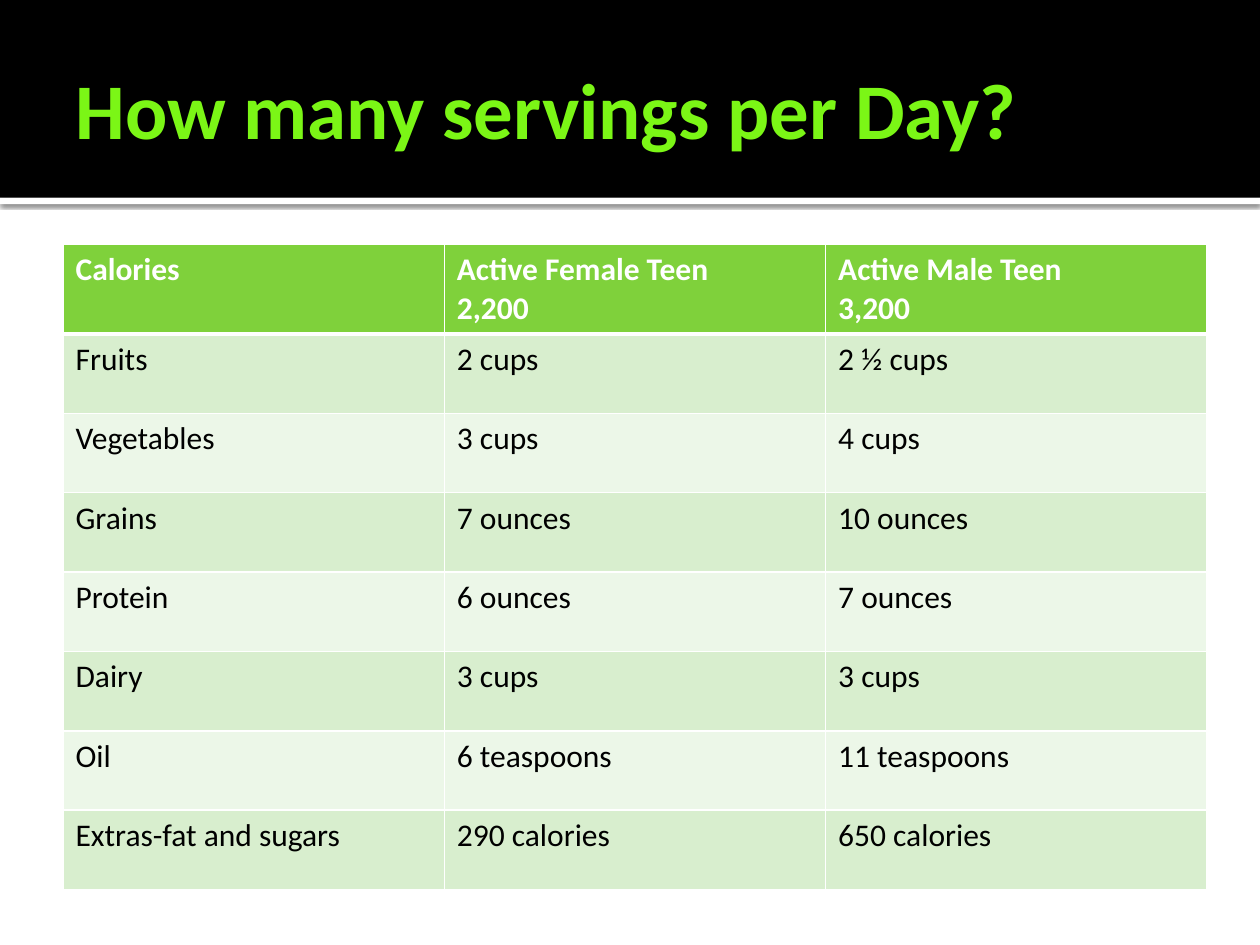
from dataclasses import dataclass

from lxml import etree
from pptx import Presentation
from pptx import util as u
from pptx.dml.color import RGBColor
from pptx.enum import shapes, text
from pptx.oxml import ns, parse_xml

In = u.Inches


@dataclass(frozen=True)
class Theme:
    """Hold the colours, font and type sizes."""
    font: str = "Calibri"
    black: str = "000000"
    white: str = "FFFFFF"
    lime: str = "7BF616"
    head: str = "7FD13B"
    bands: tuple = ("D8EECE", "ECF7E8")
    title: int = 45
    body: int = 18


T = Theme()
ROWS = [
    ("Calories", "Active Female Teen\n2,200", "Active Male Teen\n3,200"),
    ("Fruits", "2 cups", "2 ½ cups"),
    ("Vegetables", "3 cups", "4 cups"),
    ("Grains", "7 ounces", "10 ounces"),
    ("Protein", "6 ounces", "7 ounces"),
    ("Dairy", "3 cups", "3 cups"),
    ("Oil", "6 teaspoons", "11 teaspoons"),
    ("Extras-fat and sugars", "290 calories", "650 calories"),
]


def write(frame, words, size=T.body, color=T.black, bold=False):
    """Fill a text frame with formatted, left-aligned paragraphs."""
    frame.text = words
    for par in frame.paragraphs:
        par.alignment = text.PP_ALIGN.LEFT
        for run in par.runs:
            font = run.font
            font.name, font.size, font.bold = T.font, u.Pt(size), bold
            font.color.rgb = RGBColor.from_string(color)


def paint(fill, color):
    """Give a fill one solid colour."""
    fill.solid()
    fill.fore_color.rgb = RGBColor.from_string(color)


def bar(slide, box, color):
    """Add a plain rectangle without line or shadow."""
    rect = slide.shapes.add_shape(shapes.MSO_SHAPE.RECTANGLE, *map(In, box))
    rect.shadow.inherit = False
    paint(rect.fill, color)
    rect.line.fill.background()
    return rect


def shade(rect, blur, dist, alpha):
    """Cast a soft shadow straight down, with sizes in points."""
    effects = rect.element.spPr.find(ns.qn("a:effectLst"))
    glow = etree.SubElement(
        effects, ns.qn("a:outerShdw"), blurRad=str(u.Pt(blur)),
        dist=str(u.Pt(dist)), dir="5400000", rotWithShape="0")
    tint = etree.SubElement(glow, ns.qn("a:srgbClr"), val=T.black)
    etree.SubElement(tint, ns.qn("a:alpha"), val=str(alpha * 1000))


def edge(cell, **sides):
    """Draw white cell borders, with widths in points by side."""
    props = cell._tc.get_or_add_tcPr()
    for side, width in sides.items():
        props.append(parse_xml(
            f'<a:ln{side} {ns.nsdecls("a")} w="{u.Pt(width)}"><a:solidFill>'
            f'<a:srgbClr val="{T.white}"/></a:solidFill></a:ln{side}>'))


def header(slide, box, words):
    """Place the black band, its shadowed rule and the title."""
    left, top, width, height = box
    shade(bar(slide, (left, top + height, width, 0.05), T.white), 2.5, 0.8, 60)
    bar(slide, box, T.black)
    title = slide.shapes.title
    title.left, title.top = In(left + 0.5), In(top + 0.17)
    title.width, title.height = In(width - 1), In(height - 0.2)
    frame = title.text_frame
    write(frame, words, size=T.title, color=T.lime, bold=True)
    frame.word_wrap = True
    frame.auto_size = text.MSO_AUTO_SIZE.NONE
    frame.vertical_anchor = text.MSO_ANCHOR.MIDDLE
    frame.margin_left = In(0.1)
    frame.margin_right = frame.margin_top = frame.margin_bottom = In(0.05)
    title.element.getparent().append(title.element)


def servings(slide, box, rows):
    """Place the banded table of servings."""
    grid = slide.shapes.add_table(len(rows), len(rows[0]), *map(In, box)).table
    for r, row in enumerate(rows):
        grid.rows[r].height = In(0.63)
        top = r == 0
        for c, words in enumerate(row):
            cell = grid.cell(r, c)
            edge(cell, L=1, R=1, T=3 if r == 1 else 1, B=3 if top else 1)
            paint(cell.fill, T.head if top else T.bands[(r - 1) % 2])
            write(cell.text_frame, words, bold=top,
                  color=T.white if top else T.black)


def main():
    """Build and save the slide."""
    deck = Presentation()
    deck.slide_width, deck.slide_height = In(10), In(7.5)
    slide = deck.slides.add_slide(deck.slide_layouts[5])
    paint(slide.background.fill, T.white)
    header(slide, (0, 0, 10, 1.57), "How many servings per Day?")
    servings(slide, (0.5, 1.94, 9.08, 5.04), ROWS)
    deck.save("out.pptx")


if __name__ == "__main__":
    main()
